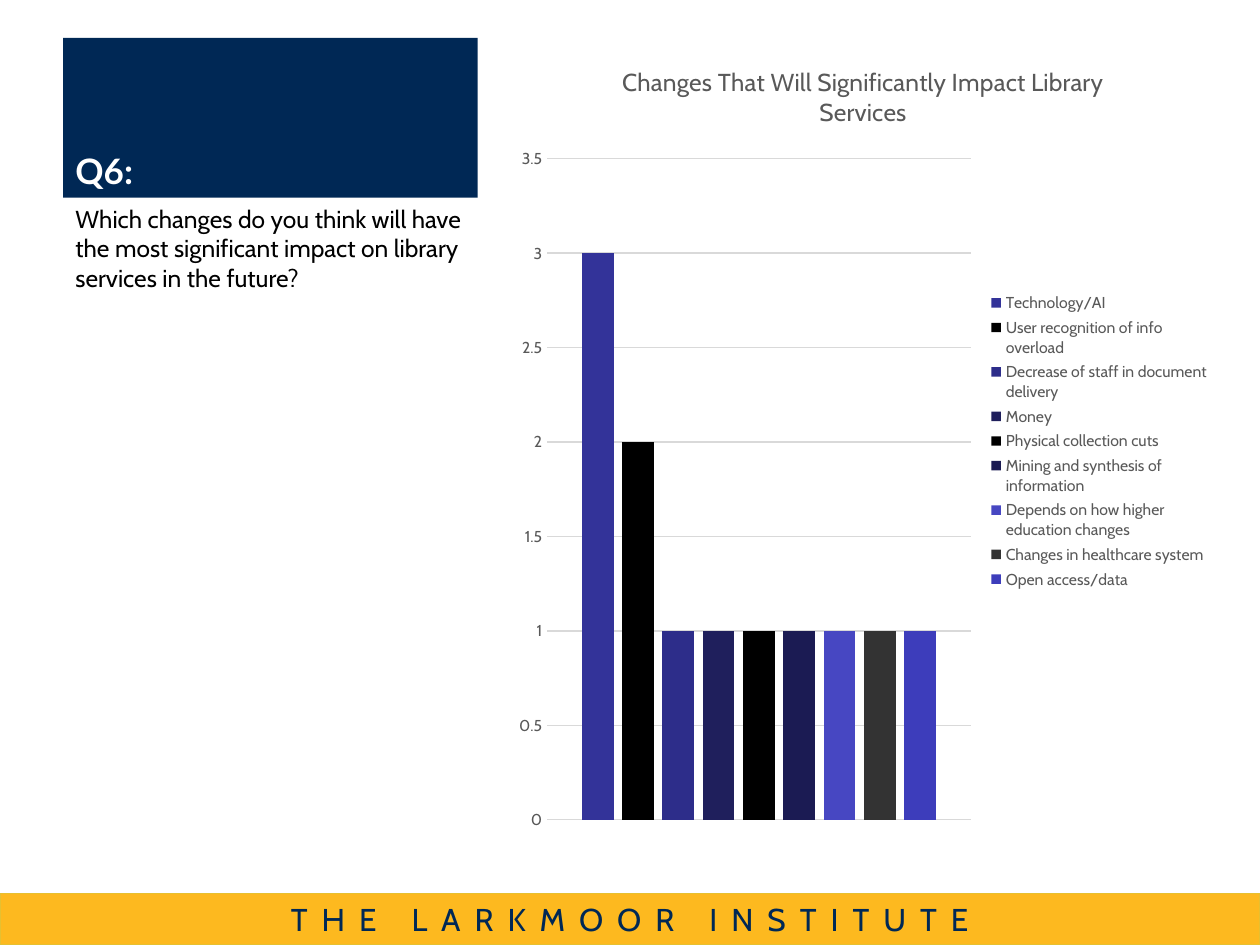
import pptx
import pptx.chart.data
import pptx.dml.color
import pptx.enum.chart
import pptx.enum.shapes
import pptx.enum.text
import pptx.oxml
import pptx.oxml.ns
import pptx.util

Pt = pptx.util.Pt
RGBColor = pptx.dml.color.RGBColor
PP_ALIGN = pptx.enum.text.PP_ALIGN
MSO_ANCHOR = pptx.enum.text.MSO_ANCHOR
XL = pptx.enum.chart

NAVY = RGBColor(0x00, 0x28, 0x55)
GOLD = RGBColor(0xFD, 0xB9, 0x1F)
GOLD_EDGE = RGBColor(0xE6, 0xC0, 0x31)
WHITE = RGBColor(0xFF, 0xFF, 0xFF)
BLACK = RGBColor(0x00, 0x00, 0x00)
GREY = RGBColor(0x59, 0x59, 0x59)
GRID = RGBColor(0xD9, 0xD9, 0xD9)

CHANGES = [
    ("Technology/AI", 3, RGBColor(0x33, 0x33, 0x99)),
    ("User recognition of info overload", 2, BLACK),
    ("Decrease of staff in document delivery", 1, RGBColor(0x2D, 0x2D, 0x8A)),
    ("Money", 1, RGBColor(0x1F, 0x1F, 0x5C)),
    ("Physical collection cuts", 1, BLACK),
    ("Mining and synthesis of information", 1, RGBColor(0x1B, 0x1B, 0x53)),
    ("Depends on how higher education changes", 1, RGBColor(0x47, 0x47, 0xC2)),
    ("Changes in healthcare system", 1, RGBColor(0x33, 0x33, 0x33)),
    ("Open access/data", 1, RGBColor(0x3D, 0x3D, 0xBB)),
]


class Deck:
    FONT = "Cabin"
    HEADING_FONT = "Lato"

    def __init__(self, width, height):
        self.prs = pptx.Presentation()
        self.prs.slide_width, self.prs.slide_height = Pt(width), Pt(height)
        self.s = self.prs.slides.add_slide(self.prs.slide_layouts[6])

    def font(self, font, color, **values):
        for name, value in {"name": self.FONT, "bold": False, **values}.items():
            setattr(font, name, value)
        font.color.rgb = color

    def paragraph(self, sp, text, color, align=PP_ALIGN.LEFT,
                  anchor=MSO_ANCHOR.TOP, tracking=0, **values):
        """Fill a shape with one paragraph; tracking is in points."""
        tf = sp.text_frame
        tf.word_wrap = True
        tf.vertical_anchor = anchor
        p = tf.paragraphs[0]
        p.alignment = align
        r = p.add_run()
        r.text = text
        self.font(r.font, color, **values)
        if tracking:
            r.font._element.set("spc", str(tracking * 100))

    def box(self, box, fill, text, color, line=None, **values):
        sp = self.s.shapes.add_shape(
            pptx.enum.shapes.MSO_SHAPE.RECTANGLE, *map(Pt, box))
        sp.shadow.inherit = False
        sp.fill.solid()
        sp.fill.fore_color.rgb = fill
        if line is None:
            sp.line.fill.background()
        else:
            sp.line.color.rgb = line
            sp.line.width = Pt(0.75)
        self.paragraph(sp, text, color, **values)

    def text(self, box, text, color, **values):
        sp = self.s.shapes.add_textbox(*map(Pt, box))
        self.paragraph(sp, text, color, **values)

    def column_chart(self, box, title, category, series, plot_area):
        data = pptx.chart.data.CategoryChartData()
        data.categories = [category]
        for name, value, _ in series:
            data.add_series(name, [value])
        chart = self.s.shapes.add_chart(
            XL.XL_CHART_TYPE.COLUMN_CLUSTERED, *map(Pt, box), data).chart
        self.font(chart.font, BLACK, size=Pt(10))

        chart.has_title = True
        tf = chart.chart_title.text_frame
        tf.text = title
        self.font(tf.paragraphs[0].runs[0].font, GREY, size=Pt(14))
        chart.chart_title.include_in_layout = False

        chart.has_legend = True
        chart.legend.position = XL.XL_LEGEND_POSITION.RIGHT
        chart.legend.include_in_layout = False
        self.font(chart.legend.font, GREY, size=Pt(9))

        plot = chart.plots[0]
        for name, value in {"gap_width": 219, "overlap": -27,
                            "vary_by_categories": False}.items():
            setattr(plot, name, value)
        for ser, (_, _, color) in zip(plot.series, series):
            ser.format.fill.solid()
            ser.format.fill.fore_color.rgb = color

        chart.category_axis.visible = False
        axis = chart.value_axis
        for name, value in {"minimum_scale": 0, "maximum_scale": 3.5,
                            "major_unit": 0.5,
                            "major_tick_mark": XL.XL_TICK_MARK.NONE,
                            "minor_tick_mark": XL.XL_TICK_MARK.NONE}.items():
            setattr(axis, name, value)
        axis.format.line.fill.background()
        axis.major_gridlines.format.line.color.rgb = GRID
        axis.major_gridlines.format.line.width = Pt(0.75)
        self.font(axis.tick_labels.font, GREY, size=Pt(9))
        self.place_plot(chart, plot_area)

    def place_plot(self, chart, plot_area):
        """Set the inner plot area as fractions x, y, w, h of the chart."""
        sizes = "".join(f'<c:{k} val="{v}"/>' for k, v in zip("xywh", plot_area))
        layout = pptx.oxml.parse_xml(
            f'<c:layout {pptx.oxml.ns.nsdecls("c")}><c:manualLayout>'
            '<c:layoutTarget val="inner"/><c:xMode val="edge"/>'
            f'<c:yMode val="edge"/>{sizes}</c:manualLayout></c:layout>')
        area = chart._chartSpace.chart.plotArea
        for old in area.findall(pptx.oxml.ns.qn("c:layout")):
            area.remove(old)
        area.insert(0, layout)


def main():
    deck = Deck(720, 540)
    deck.box((0, 510.5, 720, 29.5), GOLD, "THE LARKMOOR INSTITUTE", NAVY,
             line=GOLD_EDGE, align=PP_ALIGN.CENTER, anchor=MSO_ANCHOR.MIDDLE,
             tracking=8, size=Pt(18))
    deck.box((36, 21.6, 236.9, 91.4), NAVY, "Q6:", WHITE,
             anchor=MSO_ANCHOR.BOTTOM, name=deck.HEADING_FONT, bold=True,
             size=Pt(20))
    deck.text((36, 113, 236.9, 369.4),
              "Which changes do you think will have the most significant "
              "impact on library services in the future?",
              BLACK, size=Pt(14))
    deck.column_chart((288, 21.6, 410.4, 460.8),
                      "Changes That Will Significantly Impact Library Services",
                      "1", CHANGES, (0.06, 0.15, 0.59, 0.82))
    deck.prs.save("out.pptx")


if __name__ == "__main__":
    main()
